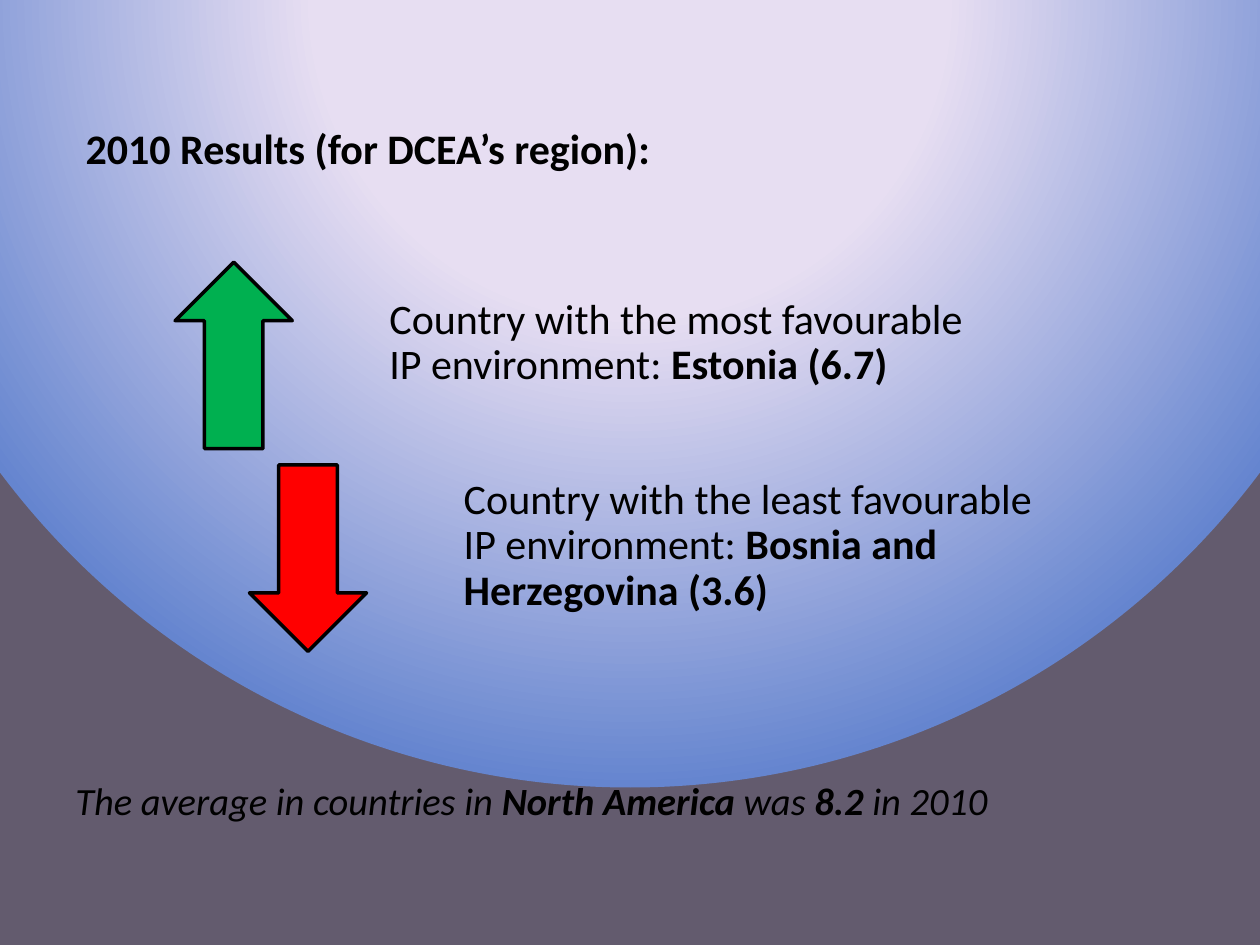
import pptx
import pptx.dml.color
import pptx.enum.shapes
import pptx.enum.text
import pptx.oxml
import pptx.oxml.ns
import pptx.util
from pptx.util import Inches

COLOURS = {
    "text": "000000",
    "outline": "000000",
    "best": "00B050",
    "worst": "FF0000",
    "glow": "E7DEF2",
    "blue": "6585CF",
    "edge": "635B6E",
}
FONT = "Calibri"
ARROWS = pptx.enum.shapes.MSO_SHAPE
ANCHORS = pptx.enum.text.MSO_ANCHOR


def colour(name):
    return pptx.dml.color.RGBColor.from_string(COLOURS[name])


def paint_background(page):
    """Radial gradient centred above the page."""
    page.background.fill.gradient()
    old = page.element.find(".//" + pptx.oxml.ns.qn("a:gradFill"))
    stops = "".join(
        f'<a:gs pos="{position}"><a:srgbClr val="{COLOURS[name]}"/></a:gs>'
        for position, name in ((0, "glow"), (40000, "glow"), (100000, "blue"), (100000, "edge"))
    )
    gradient = pptx.oxml.parse_xml(
        f'<a:gradFill {pptx.oxml.ns.nsdecls("a")} rotWithShape="1"><a:gsLst>{stops}</a:gsLst>'
        '<a:path path="circle"><a:fillToRect l="50000" t="-80000" r="50000" b="180000"/></a:path>'
        "</a:gradFill>"
    )
    old.getparent().replace(old, gradient)


def write_text(box, spans, size, italic=False, anchor=ANCHORS.TOP):
    """Fill a box with one paragraph of (text, bold) spans."""
    frame = box.text_frame
    frame.word_wrap = True
    frame.auto_size = pptx.enum.text.MSO_AUTO_SIZE.NONE
    frame.vertical_anchor = anchor
    para = frame.paragraphs[0]
    para.alignment = pptx.enum.text.PP_ALIGN.LEFT
    para.font.name = FONT
    para.font.size = pptx.util.Pt(size)
    para.font.italic = italic
    para.font.color.rgb = colour("text")
    for text, bold in spans:
        span = para.add_run()
        span.text = text
        span.font.bold = bold
    return frame


def add_title(page, text):
    title = page.shapes.title
    title.left, title.top = Inches(0.58), Inches(0.92)
    title.width, title.height = Inches(8.5), Inches(0.58)
    write_text(title, [(text, True)], 24)


def add_result(group, kind, fill, left, top, label, country):
    """Arrow with its description to the right."""
    height = Inches(1.48)
    arrow = group.shapes.add_shape(kind, Inches(left), Inches(top), Inches(0.93), height)
    arrow.shadow.inherit = False
    arrow.fill.solid()
    arrow.fill.fore_color.rgb = colour(fill)
    arrow.line.color.rgb = colour("outline")
    arrow.line.width = pptx.util.Pt(2)

    box = group.shapes.add_textbox(Inches(left + 1.51), Inches(top), Inches(4.95), height)
    frame = write_text(box, [(label, False), (country, True)], 24, anchor=ANCHORS.MIDDLE)
    frame.margin_left = frame.margin_right = frame.margin_bottom = Inches(0.19)
    frame.margin_top = 0
    frame.paragraphs[0].line_spacing = 0.9


def add_average(page):
    box = page.shapes.add_textbox(Inches(0.5), Inches(6.12), Inches(8.83), Inches(0.45))
    spans = [
        ("The average in countries in ", False),
        ("North America ", True),
        ("was ", False),
        ("8.2", True),
        (" in 2010", False),
    ]
    write_text(box, spans, 22, italic=True)


def main():
    deck = pptx.Presentation()
    deck.slide_width, deck.slide_height = Inches(10), Inches(7.5)
    page = deck.slides.add_slide(deck.slide_layouts[5])
    paint_background(page)
    add_title(page, "2010 Results (for DCEA’s region):")

    # Best and worst countries
    group = page.shapes.add_group_shape()
    add_result(group, ARROWS.UP_ARROW, "best", 1.39, 2.08,
               "Country with the most favourable IP environment: ", "Estonia (6.7)")
    add_result(group, ARROWS.DOWN_ARROW, "worst", 1.98, 3.69,
               "Country with the least favourable IP environment: ",
               "Bosnia and Herzegovina (3.6)")

    add_average(page)
    deck.save("out.pptx")


if __name__ == "__main__":
    main()
